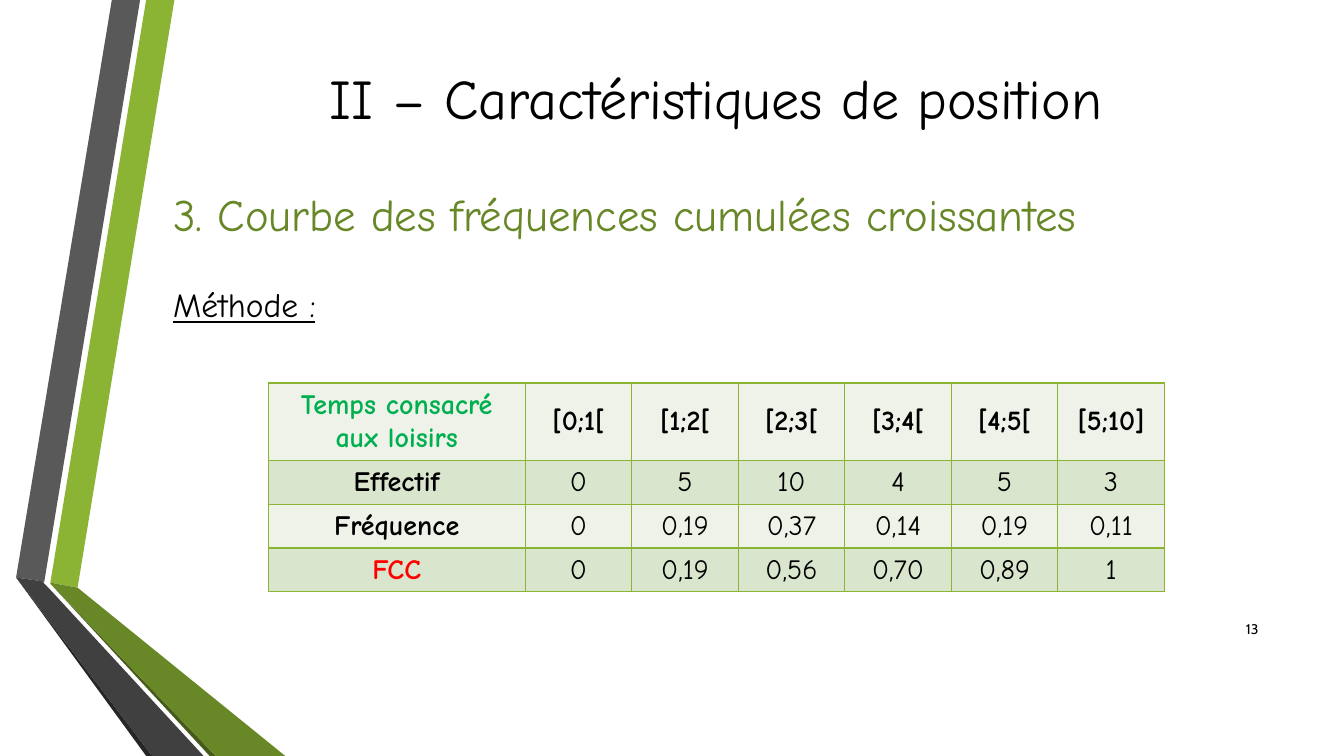
from lxml.etree import SubElement
from pptx import Presentation
from pptx.dml.color import RGBColor
from pptx.enum.text import MSO_ANCHOR, PP_ALIGN
from pptx.oxml.ns import qn
from pptx.util import Inches, Pt

COMIC = "Comic Neue"
GREEN = "8BB434"
BLACK = "000000"

# Ribbon pieces, back to front: colour and corners in inches
BANDS = [
    (GREEN, [(0.5, 5.78), (0.77, 5.83), (1.73, 0), (1.45, 0)]),
    ("595959", [(1.39, 0), (1.11, 0), (0.16, 5.73), (0.44, 5.77)]),
    ("262626", [(0.16, 5.73), (1.45, 7.5), (1.51, 7.5)]),
    ("465A1A", [(0.5, 5.79), (2.08, 7.5), (2.14, 7.5)]),
    ("688727", [(0.5, 5.79), (2.14, 7.5), (2.83, 7.5), (0.77, 5.83),
                (0.5, 5.78)]),
    ("404040", [(2.02, 7.5), (0.48, 5.83), (0.43, 5.78), (0.44, 5.77),
                (0.16, 5.73), (1.51, 7.5)]),
]

ROWS = [
    ["Temps consacré aux loisirs",
     "[0;1[", "[1;2[", "[2;3[", "[3;4[", "[4;5[", "[5;10]"],
    ["Effectif", "0", "5", "10", "4", "5", "3"],
    ["Fréquence", "0", "0,19", "0,37", "0,14", "0,19", "0,11"],
    ["FCC", "0", "0,19", "0,56", "0,70", "0,89", "1"],
]
HEADS = ["00B050", BLACK, BLACK, "FF0000"]
FILLS = ["EEF2E8", "DAE5CE"]


def color(code):
    return RGBColor.from_string(code)


def style(frame, size, code, font=COMIC, align=PP_ALIGN.LEFT,
          bold=False, line=False):
    for para in frame.paragraphs:
        para.alignment = align
        for run in para.runs:
            run.font.name = font
            run.font.size = Pt(size)
            run.font.bold = bold
            run.font.underline = line
            run.font.color.rgb = color(code)


def add_text(slide, box, text, size, code, anchor=MSO_ANCHOR.TOP, **look):
    frame = slide.shapes.add_textbox(*map(Inches, box)).text_frame
    frame.word_wrap = True
    frame.vertical_anchor = anchor
    frame.text = text
    style(frame, size, code, **look)


def add_ribbon(slide, left, top):
    for code, points in BANDS:
        first, *rest = [(Inches(left + x), Inches(top + y))
                        for x, y in points]
        pen = slide.shapes.build_freeform(*first)
        pen.add_line_segments(rest, close=True)
        band = pen.convert_to_shape()
        band.shadow.inherit = False
        band.fill.solid()
        band.fill.fore_color.rgb = color(code)
        band.line.fill.background()


def add_heads(slide, box):
    left, top, width, height = box
    # Title
    add_text(slide, (left, top, width, 1.92),
             "II – Caractéristiques de position", 40, BLACK,
             anchor=MSO_ANCHOR.MIDDLE, align=PP_ALIGN.CENTER)
    # Section and method
    add_text(slide, (left, top + 1.8, width, 0.64),
             "3. Courbe des fréquences cumulées croissantes", 32, "688727")
    add_text(slide, (left, top + 2.77, width, 0.5),
             "Méthode :", 24, BLACK, line=True)
    # Slide number
    add_text(slide, (left + width - 0.6, top + height - 0.4, 0.6, 0.4),
             "13", 10, BLACK, font="Cabin", anchor=MSO_ANCHOR.MIDDLE,
             align=PP_ALIGN.RIGHT)


def add_edges(cell):
    props = cell._tc.get_or_add_tcPr()
    for side in ("a:lnL", "a:lnR", "a:lnT", "a:lnB"):
        edge = SubElement(props, qn(side), w=str(Pt(1)))
        fill = SubElement(edge, qn("a:solidFill"))
        SubElement(fill, qn("a:srgbClr"), val=GREEN)


def add_grid(slide, box):
    left, top, width, height = box
    count = len(ROWS[0])
    grid = slide.shapes.add_table(len(ROWS), count,
                                  *map(Inches, box)).table
    # Wide first column and tall first row, the rest shared equally
    head, tall = 2.55, 0.77
    for i, col in enumerate(grid.columns):
        col.width = Inches((width - head) / (count - 1) if i else head)
    for i, row in enumerate(grid.rows):
        row.height = Inches((height - tall) / (len(ROWS) - 1) if i else tall)
    # Cells
    for r, row in enumerate(ROWS):
        for c, text in enumerate(row):
            cell = grid.cell(r, c)
            add_edges(cell)
            cell.fill.solid()
            cell.fill.fore_color.rgb = color(FILLS[r % 2])
            cell.vertical_anchor = MSO_ANCHOR.MIDDLE
            cell.text_frame.text = text
            style(cell.text_frame, 20, BLACK if c else HEADS[r],
                  align=PP_ALIGN.CENTER, bold=r == 0 or c == 0)


def main():
    deck = Presentation()
    deck.slide_width = Inches(13.33)
    deck.slide_height = Inches(7.5)
    slide = deck.slides.add_slide(deck.slide_layouts[6])
    add_ribbon(slide, 0, 0)
    add_heads(slide, (1.62, 0, 10.96, 6.44))
    add_grid(slide, (2.66, 3.8, 8.89, 2.07))
    deck.save("out.pptx")


if __name__ == "__main__":
    main()
